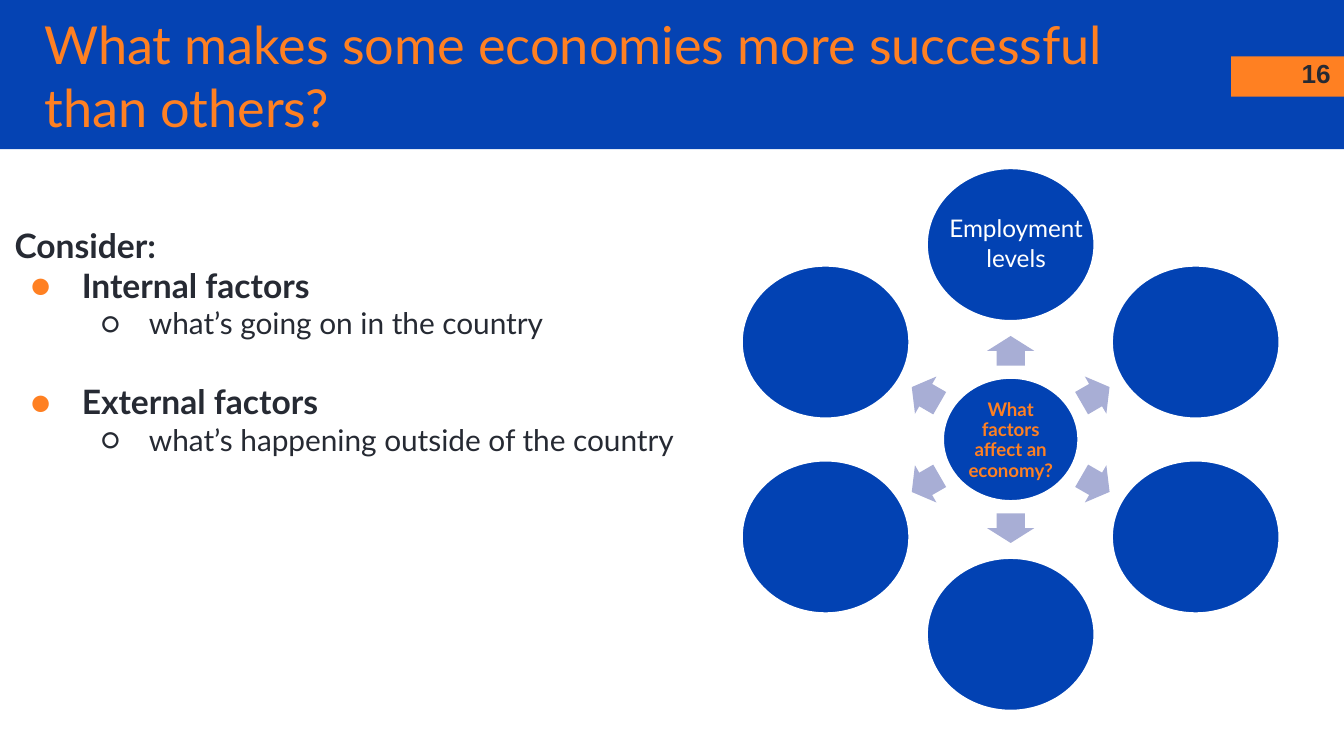
"""Build the slide on what makes economies successful."""
from math import cos, radians, sin

from lxml.etree import SubElement as Sub
from pptx import Presentation
from pptx.dml.color import RGBColor
from pptx.enum.shapes import MSO_SHAPE as Shape
from pptx.enum.text import MSO_ANCHOR as Anchor, MSO_AUTO_SIZE as Fit, PP_ALIGN as Align
from pptx.oxml.ns import qn
from pptx.util import Inches, Pt

BLUE, DISC, ORANGE = "0543B3", "0242B3", "FF8022"
DARK, LILAC, WHITE = "262A33", "A8AED5", "FFFFFF"


def paint(code):
    return RGBColor.from_string(code)


def write(par, text, size=18, color=DARK, bold=False, font="Lato",
          align=Align.LEFT, lead=None, before=None, mark=None):
    if mark:
        sign, tint, level, left, hang = mark
        par.level = level
        props = par._p.get_or_add_pPr()
        props.set("marL", str(Inches(left)))
        props.set("indent", str(Inches(hang)))
        Sub(Sub(props, qn("a:buClr")), qn("a:srgbClr"), val=tint)
        Sub(props, qn("a:buFont"), typeface=font)
        Sub(props, qn("a:buChar"), char=sign)
    par.alignment = align
    if lead:
        par.line_spacing = lead
    if before:
        par.space_before = Pt(before)
    run = par.add_run()
    run.text = text
    run.font.size, run.font.bold, run.font.name = Pt(size), bold, font
    run.font.color.rgb = paint(color)


class Deck:
    def __init__(self, show):
        self.slide = show.slides.add_slide(show.slide_layouts[5])
        self.shapes = self.slide.shapes

    def shape(self, kind, x, y, w, h, fill, line=None, turn=0):
        item = self.shapes.add_shape(kind, *map(Inches, (x, y, w, h)))
        item.shadow.inherit = False
        item.fill.solid()
        item.fill.fore_color.rgb = paint(fill)
        if line:
            item.line.color.rgb = paint(line)
            item.line.width = Pt(2)
        else:
            item.line.fill.background()
        item.rotation = turn
        return item

    def disc(self, x, y, w, h):
        self.shape(Shape.OVAL, x - w / 2, y - h / 2, w, h, DISC, WHITE)

    def arrow(self, x, y, w, h, turn):
        item = self.shape(Shape.RIGHT_ARROW, x - w / 2, y - h / 2, w, h, LILAC, turn=turn)
        item.adjustments[0], item.adjustments[1] = 0.6, 0.5

    def frame(self, frame, inset=0.1, anchor=Anchor.TOP):
        frame.word_wrap, frame.auto_size = True, Fit.NONE
        frame.vertical_anchor = anchor
        frame.margin_left = frame.margin_right = Inches(inset)
        frame.margin_top = frame.margin_bottom = Inches(inset)
        return frame

    def box(self, x, y, w, h, **look):
        item = self.shapes.add_textbox(*map(Inches, (x, y, w, h)))
        return self.frame(item.text_frame, **look)

    def title(self, text, x, y, w, h):
        item = self.shapes.title
        item.left, item.top, item.width, item.height = map(Inches, (x, y, w, h))
        item.element.getparent().append(item.element)
        frame = self.frame(item.text_frame, anchor=Anchor.MIDDLE)
        write(frame.paragraphs[0], text, size=28, color=ORANGE)

    def label(self, text, place, look={}, **form):
        write(self.box(*place, **look).paragraphs[0], text, **form)

    def points(self, head, items, place):
        frame = self.box(*place)
        write(frame.paragraphs[0], head, bold=True)
        for i, (name, note) in enumerate(items):
            write(frame.add_paragraph(), name, bold=True,
                  before=21.6 if i else None, mark=("●", ORANGE, 0, 0.5, -0.38))
            write(frame.add_paragraph(), note, size=16, mark=("○", DARK, 1, 1, -0.36))

    def wheel(self, x, y):
        self.disc(x, y, 1.02, 0.93)
        for turn in range(30, 390, 60):
            across, down = cos(radians(turn)), sin(radians(turn))
            size = (0.22, 0.35) if turn % 180 == 90 else (0.24, 0.32)
            self.arrow(x + 0.73 * across, y + 0.66 * down, *size, turn)
            self.disc(x + 1.59 * across, y + 1.45 * down, 1.26, 1.15)


def main():
    show = Presentation()
    show.slide_width = Inches(10)
    show.slide_height = show.slide_width * 9 // 16
    deck = Deck(show)
    deck.shape(Shape.RECTANGLE, 0, 0, 10, 1.11, BLUE)
    deck.shape(Shape.RECTANGLE, 9.16, 0.42, 0.84, 0.3, ORANGE)
    deck.label("16", (9.4, 0.33, 0.6, 0.43), size=14, bold=True,
               font="Arial", align=Align.RIGHT)
    deck.title("What makes some economies more successful than others?",
               0.23, 0.28, 8.74, 0.56)
    deck.points("Consider:", [
        ("Internal factors", "what’s going on in the country"),
        ("External factors", "what’s happening outside of the country"),
    ], (0.01, 1.57, 5.21, 2.52))
    deck.wheel(7.52, 3.27)
    deck.label("What factors affect an economy?", (7.16, 2.95, 0.72, 0.66),
               {"inset": 0.01, "anchor": Anchor.MIDDLE}, size=10, color=ORANGE,
               bold=True, align=Align.CENTER, lead=0.9)
    deck.label("Employment levels", (6.92, 1.49, 1.28, 0.64),
               size=13, color=WHITE, align=Align.CENTER)
    show.save("out.pptx")


if __name__ == "__main__":
    main()
